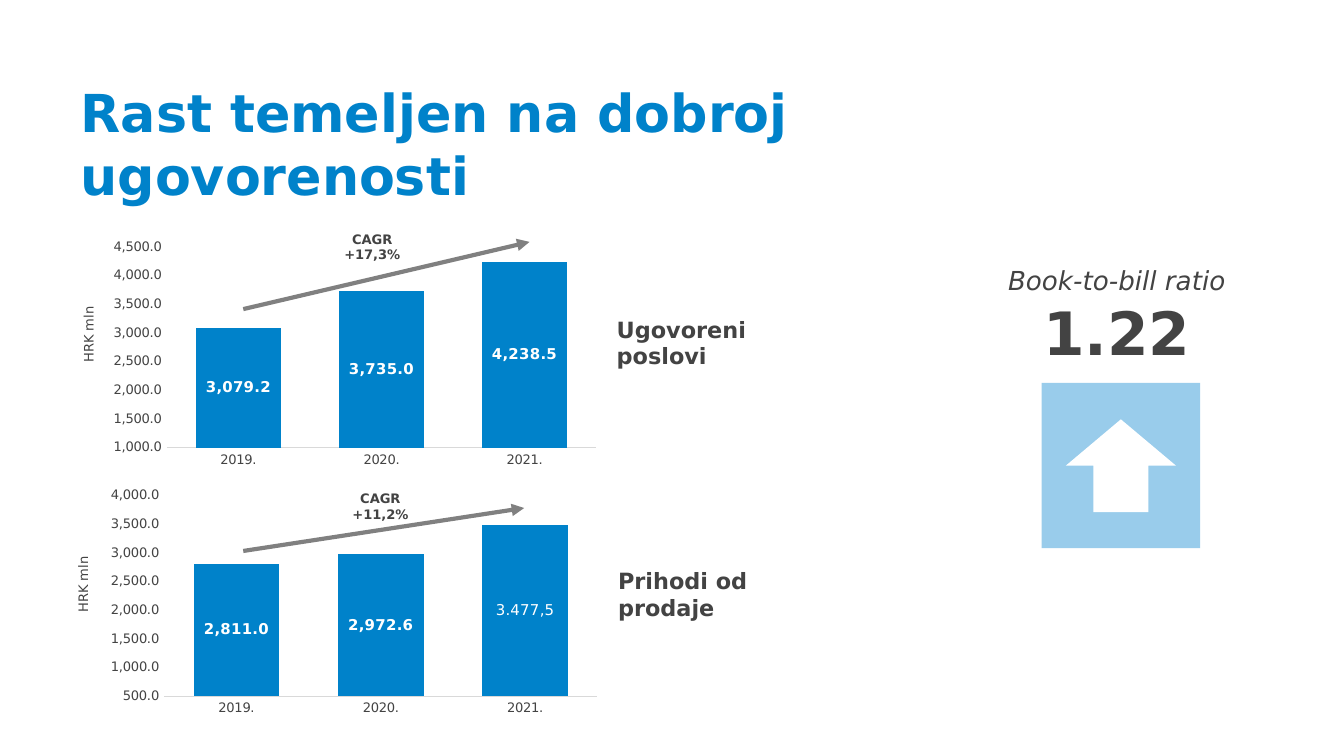
"""Build a slide on growth of contracts and sales with two column charts."""
import pptx
import pptx.chart.data
import pptx.dml.color
import pptx.enum.chart
import pptx.enum.shapes
import pptx.enum.text
import pptx.oxml
import pptx.oxml.ns
import pptx.util

FONT = "DejaVu Sans"
BLUE, PALE, WHITE = "0082CA", "99CCEB", "FFFFFF"
DARK, GREY, LIGHT = "434343", "808080", "D9D9D9"
WIDE, HIGH = 10, 10 * 9 / 16

TITLE = "Rast temeljen na dobroj ugovorenosti"
YEARS = ["2019.", "2020.", "2021."]
RATIO = [("Book-to-bill ratio", 14, False, True), ("1.22", 32, True, False)]
PANELS = [
    dict(at=(0.77, 1.75, 3.74, 1.76), vals=(3079.2, 3735, 4238.5),
         low=1000, high=4500, notes={},
         trend=(1.81, 2.3, 3.94, 1.8), rate="+17,3%", rate_at=(2.33, 1.67),
         name="Ugovoreni poslovi", name_at=(4.49, 2.3), unit_at=(0.22, 2.38)),
    dict(at=(0.75, 3.6, 3.77, 1.76), vals=(2811, 2972.6, 3478),
         low=500, high=4000, notes={2: "3.477,5"},
         trend=(1.81, 4.1, 3.9, 3.78), rate="+11,2%", rate_at=(2.39, 3.6),
         name="Prihodi od prodaje", name_at=(4.5, 4.17), unit_at=(0.18, 4.24)),
]
BLOCKS = [
    ("RECTANGLE", (7.75, 2.85, 1.18, 1.23), PALE),
    ("UP_ARROW", (7.93, 3.12, 0.82, 0.69), WHITE),
]


def place(at):
    return [pptx.util.Inches(n) for n in at]


def paint(part, color):
    if hasattr(part, "solid"):
        part.solid()
        part = part.fore_color
    part.rgb = pptx.dml.color.RGBColor.from_string(color)


def style(font, size, color=DARK, bold=False, italic=False):
    font.name, font.size = FONT, pptx.util.Pt(size)
    font.bold, font.italic = bold, italic
    paint(font.color, color)


def write(slide, at, lines, center=True, turn=0):
    box = slide.shapes.add_textbox(*place(at))
    box.rotation = turn
    frame = box.text_frame
    frame.word_wrap = True
    frame.text = "\n".join(line[0] for line in lines)
    for para, (_, size, bold, italic) in zip(frame.paragraphs, lines):
        if center:
            para.alignment = pptx.enum.text.PP_ALIGN.CENTER
        style(para.runs[0].font, size, bold=bold, italic=italic)


def draw_chart(slide, panel):
    data = pptx.chart.data.CategoryChartData(number_format="#,##0.0")
    data.categories = YEARS
    data.add_series("Series 1", panel["vals"])
    kind = pptx.enum.chart.XL_CHART_TYPE.COLUMN_CLUSTERED
    chart = slide.shapes.add_chart(kind, *place(panel["at"]), data).chart
    chart.has_legend = chart.has_title = False
    style(chart.font, 9, "000000")

    for axis in (chart.category_axis, chart.value_axis):
        axis.has_major_gridlines = False
        axis.major_tick_mark = pptx.enum.chart.XL_TICK_MARK.NONE
        axis.minor_tick_mark = pptx.enum.chart.XL_TICK_MARK.NONE
        style(axis.tick_labels.font, 7)
    line = chart.category_axis.format.line
    paint(line.fill, LIGHT)
    line.width = pptx.util.Pt(0.75)
    scale = chart.value_axis
    scale.format.line.fill.background()
    scale.minimum_scale, scale.maximum_scale = panel["low"], panel["high"]
    scale.major_unit = 500
    scale.tick_labels.number_format = "#,##0.0"
    scale.tick_labels.number_format_is_linked = False

    plot = chart.plots[0]
    plot.gap_width, plot.overlap = 68, -52
    plot.vary_by_categories = False
    bars = plot.series[0]
    paint(bars.format.fill, BLUE)
    labels = bars.data_labels
    labels.show_value = True
    labels.number_format = "#,##0.0"
    labels.number_format_is_linked = False
    labels.position = pptx.enum.chart.XL_LABEL_POSITION.CENTER
    style(labels.font, 8, WHITE, True)
    for spot, text in panel["notes"].items():
        label = bars.points[spot].data_label
        label.text_frame.text = text
        label.position = pptx.enum.chart.XL_LABEL_POSITION.CENTER
        style(label.text_frame.paragraphs[0].runs[0].font, 8, WHITE)


def draw_trend(slide, ends):
    kind = pptx.enum.shapes.MSO_CONNECTOR.STRAIGHT
    arrow = slide.shapes.add_connector(kind, *place(ends))
    paint(arrow.line.fill, GREY)
    arrow.line.width = pptx.util.Pt(2.25)
    space = pptx.oxml.ns.nsdecls("a")
    line = arrow.line._get_or_add_ln()
    line.append(pptx.oxml.parse_xml(f'<a:tailEnd {space} type="triangle"/>'))
    arrow._element.spPr.append(pptx.oxml.parse_xml(f"<a:effectLst {space}/>"))


def main():
    deck = pptx.Presentation()
    deck.slide_width, deck.slide_height = place((WIDE, HIGH))
    slide = deck.slides.add_slide(deck.slide_layouts[5])

    title = slide.shapes.title
    title.left, title.top, title.width, title.height = place((0.5, 0.5, 5.73, 1.21))
    frame = title.text_frame
    frame.text = TITLE
    frame.word_wrap = True
    frame.auto_size = pptx.enum.text.MSO_AUTO_SIZE.NONE
    frame.vertical_anchor = pptx.enum.text.MSO_ANCHOR.TOP
    frame.margin_left = frame.margin_right = pptx.util.Inches(0.1)
    frame.margin_top = frame.margin_bottom = pptx.util.Inches(0.1)
    para = frame.paragraphs[0]
    para.alignment = pptx.enum.text.PP_ALIGN.LEFT
    style(para.runs[0].font, 28, BLUE, True)

    write(slide, (6.77, 1.92, 3.08, 0.88), RATIO)
    for name, at, color in BLOCKS:
        kind = getattr(pptx.enum.shapes.MSO_SHAPE, name)
        block = slide.shapes.add_shape(kind, *place(at))
        block.shadow.inherit = False
        paint(block.fill, color)
        block.line.fill.background()

    for panel in PANELS:
        draw_chart(slide, panel)
    for panel in PANELS:
        draw_trend(slide, panel["trend"])
        rate = [(text, 7, True, False) for text in ("CAGR", panel["rate"])]
        write(slide, (*panel["rate_at"], 0.88, 0.34), rate)
        name = [(panel["name"], 12, True, False)]
        write(slide, (*panel["name_at"], 1.65, 0.5), name, center=False)
        unit = [("HRK mln", 7, False, False)]
        write(slide, (*panel["unit_at"], 0.88, 0.22), unit, turn=270)

    deck.save("out.pptx")


if __name__ == "__main__":
    main()
